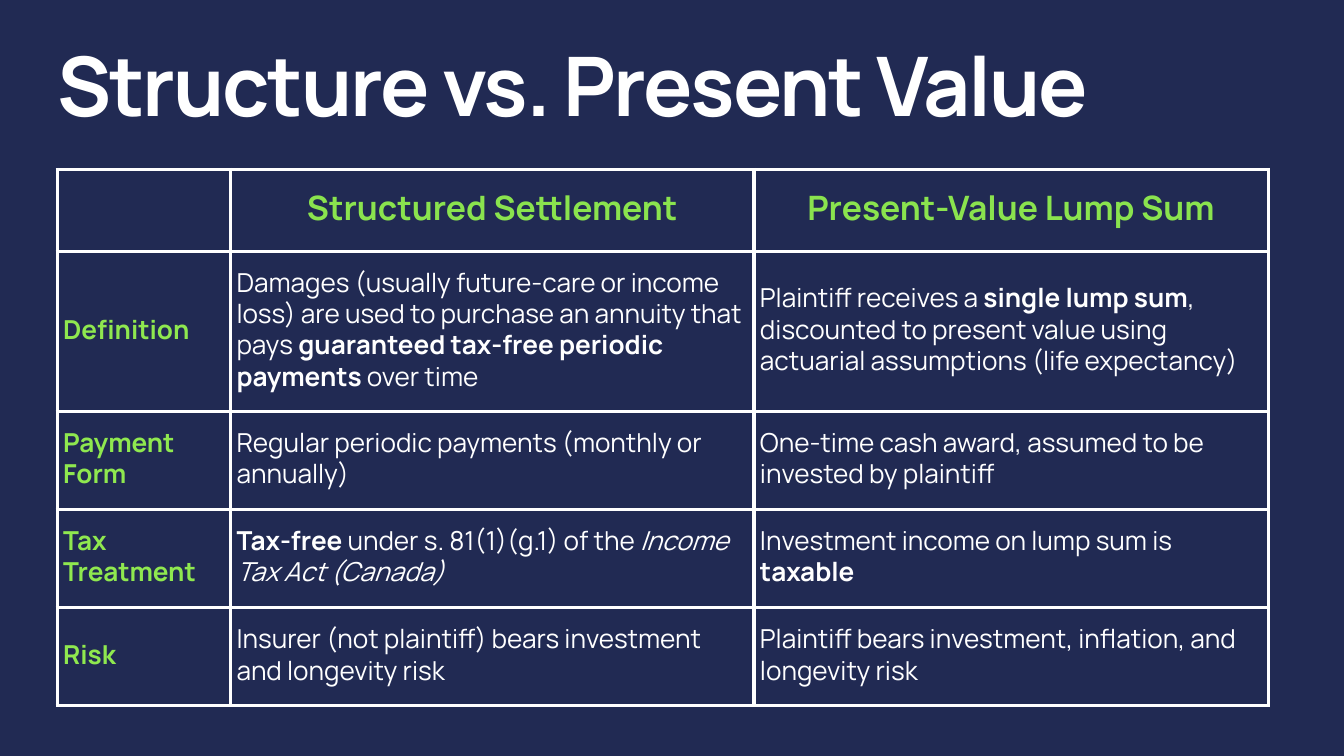
from lxml.etree import SubElement
from pptx import Presentation
from pptx.dml.color import RGBColor
from pptx.enum.text import MSO_ANCHOR, PP_ALIGN
from pptx.oxml.ns import qn
from pptx.util import Inches, Pt

NAVY, WHITE = "212A53", "FFFFFF"
LIME, GREEN = "8AE34E", "8FE84F"
FONT = "Manrope"
COLS = [2.58, 7.79, 7.65]
ROWS = [1.22, 2.38, 1.46, 1.46, 1.46]

# "*" sets off bold words and "_" italic words
CELLS = [
    ["", "Structured Settlement", "Present-Value Lump Sum"],
    ["Definition",
     "Damages (usually future-care or income loss) are used to purchase an "
     "annuity that pays |*guaranteed tax-free periodic payments| over time",
     "Plaintiff receives a |*single lump sum|, discounted to present value "
     "using actuarial assumptions (life expectancy)"],
    ["Payment Form",
     "Regular periodic payments (monthly or annually)",
     "One-time cash award, assumed to be invested by plaintiff"],
    ["Tax Treatment",
     "*Tax-free| under s. 81(1)(g.1) of the |_Income Tax Act (Canada)",
     "Investment income on lump sum is |*taxable"],
    ["Risk",
     "Insurer (not plaintiff) bears investment and longevity risk",
     "Plaintiff bears investment, inflation, and longevity risk"],
]


def rgb(code):
    return RGBColor.from_string(code)


def style(run, size, color, bold=False, italic=False):
    font = run.font
    font.name, font.size = FONT, Pt(size)
    font.bold, font.italic = bold, italic
    font.color.rgb = rgb(color)


def add_title(slide, text):
    box = slide.shapes.add_textbox(
        Inches(0.85), Inches(0.9), Inches(17.48), Inches(1.28))
    frame = box.text_frame
    frame.word_wrap = True
    frame.margin_left = frame.margin_right = 0
    frame.margin_top = frame.margin_bottom = 0
    frame.text = text
    para = frame.paragraphs[0]
    para.line_spacing = Pt(78.1)
    run = para.runs[0]
    style(run, 88, WHITE, bold=True)
    run.font._element.set("spc", "-220")


def add_border(cell, color, width):
    """Line all four sides; the lines must precede the fill in the XML."""
    props = cell._tc.get_or_add_tcPr()
    for spot, side in enumerate(("lnL", "lnR", "lnT", "lnB")):
        line = SubElement(props, qn(f"a:{side}"), w=str(Pt(width)))
        fill = SubElement(line, qn("a:solidFill"))
        SubElement(fill, qn("a:srgbClr"), val=color)
        props.insert(spot, line)


def fill_cell(cell, text, size, color, bold, align):
    cell.fill.background()
    add_border(cell, WHITE, 3.75)
    cell.vertical_anchor = MSO_ANCHOR.MIDDLE
    cell.margin_left = cell.margin_right = Inches(0.09)
    cell.margin_top = cell.margin_bottom = Inches(0.09)
    if not text:
        return
    para = cell.text_frame.paragraphs[0]
    para.alignment = align
    para.line_spacing = Pt(size * 1.2)
    for part in text.split("|"):
        run = para.add_run()
        run.text = part.lstrip("*_")
        style(run, size, color, bold or part.startswith("*"),
              part.startswith("_"))


def add_grid(slide):
    frame = slide.shapes.add_table(
        len(ROWS), len(COLS), Inches(0.85), Inches(2.52),
        Inches(sum(COLS)), Inches(sum(ROWS)))
    table = frame.table
    table.horz_banding = False
    for col, width in zip(table.columns, COLS):
        col.width = Inches(width)
    for row, height in zip(table.rows, ROWS):
        row.height = Inches(height)
    for r, texts in enumerate(CELLS):
        for c, text in enumerate(texts):
            if r == 0:
                look = (36, LIME, True, PP_ALIGN.CENTER)
            elif c == 0:
                look = (28, GREEN, True, PP_ALIGN.LEFT)
            else:
                look = (28, WHITE, False, PP_ALIGN.LEFT)
            fill_cell(table.cell(r, c), text, *look)


def main():
    deck = Presentation()
    deck.slide_width, deck.slide_height = Inches(20), Inches(11.25)
    slide = deck.slides.add_slide(deck.slide_layouts[6])
    back = slide.background.fill
    back.solid()
    back.fore_color.rgb = rgb(NAVY)
    add_title(slide, "Structure vs. Present Value")
    add_grid(slide)
    deck.save("out.pptx")


if __name__ == "__main__":
    main()
